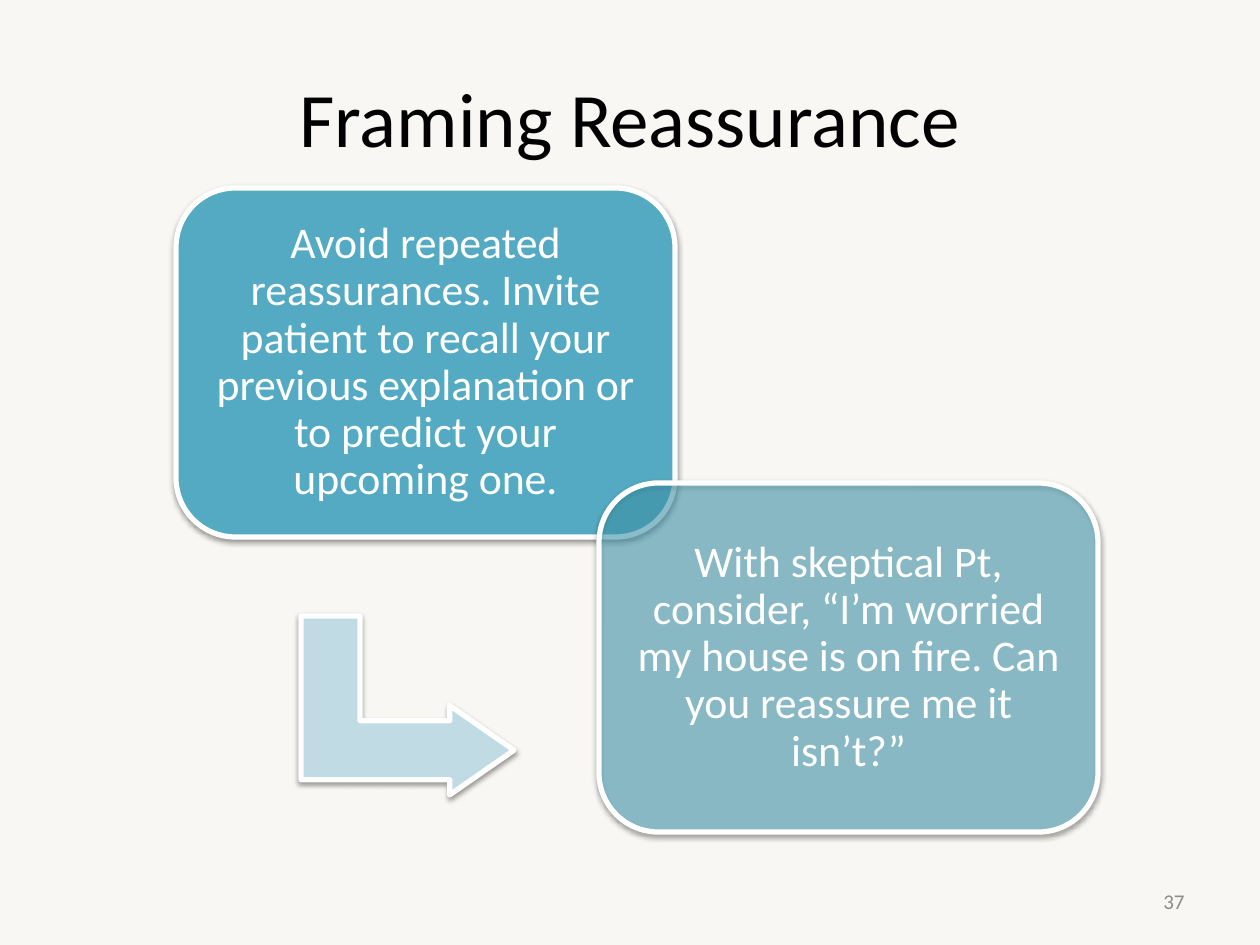
from lxml import etree
from pptx import Presentation
from pptx.dml.color import RGBColor
from pptx.enum.shapes import MSO_SHAPE
from pptx.enum.text import MSO_ANCHOR, PP_ALIGN
from pptx.oxml.ns import qn
from pptx.util import Emu, Pt

PX = 914400 / 126
FONT = "Calibri"
BLACK = RGBColor(0x00, 0x00, 0x00)
WHITE = RGBColor(0xFF, 0xFF, 0xFF)
GRAY = RGBColor(0x8C, 0x8C, 0x8C)
PAPER = RGBColor(0xF8, 0xF7, 0xF3)
TEAL = RGBColor(0x4B, 0xAC, 0xC6)
PALE_TEAL = RGBColor(0xC1, 0xDB, 0xE5)
ROUNDED, BENT_ARROW = MSO_SHAPE.ROUNDED_RECTANGLE, MSO_SHAPE.BENT_UP_ARROW
CENTER, RIGHT = PP_ALIGN.CENTER, PP_ALIGN.RIGHT
MIDDLE = MSO_ANCHOR.MIDDLE

deck = Presentation()
deck.slide_width, deck.slide_height = Emu(round(1260 * PX)), Emu(round(945 * PX))
page = deck.slides.add_slide(deck.slide_layouts[6])
page.background.fill.solid()
page.background.fill.fore_color.rgb = PAPER


def add_text(text, frame, size, color, align=CENTER, inset=None,
             line_spacing=None, space_after=None):
    box = page.shapes.add_textbox(*(Emu(round(n * PX)) for n in frame))
    body = box.text_frame
    body.word_wrap = True
    body.vertical_anchor = MIDDLE
    if inset is not None:
        body.margin_left = body.margin_right = Emu(round(inset * PX))
        body.margin_top = body.margin_bottom = Emu(round(inset * PX))
    para = body.paragraphs[0]
    para.alignment = align
    para.line_spacing = line_spacing
    para.space_after = space_after
    span = para.add_run()
    span.text = text
    span.font.name, span.font.size = FONT, Pt(size)
    span.font.color.rgb = color


def add_outlined(kind, frame, color, adjustments, opacity=100):
    """Add a white-edged shape with a soft shadow below it."""
    shape = page.shapes.add_shape(kind, *(Emu(round(n * PX)) for n in frame))
    for index, value in enumerate(adjustments):
        shape.adjustments[index] = value
    shape.fill.solid()
    shape.fill.fore_color.rgb = color
    shape.line.color.rgb = WHITE
    shape.line.width = Pt(3)
    shape.shadow.inherit = False
    properties = shape.element.spPr
    if opacity < 100:
        tint = properties.find(qn("a:solidFill")).find(qn("a:srgbClr"))
        etree.SubElement(tint, qn("a:alpha"), val=str(opacity * 1000))
    shadow = etree.SubElement(
        properties.find(qn("a:effectLst")), qn("a:outerShdw"),
        blurRad=str(Pt(3.1)), dist=str(Pt(1.6)), dir="5400000", rotWithShape="0")
    shade = etree.SubElement(shadow, qn("a:srgbClr"), val="000000")
    etree.SubElement(shade, qn("a:alpha"), val="38000")
    return shape


add_text("Framing Reassurance", (63, 38, 1134, 157), 44, BLACK)
add_text("37", (903, 876, 294, 50), 12, GRAY, align=RIGHT)

arrow = add_outlined(BENT_ARROW, (318, 599, 179, 213), PALE_TEAL, (0.33, 0.25, 0.36))
arrow.rotation = 90

CARD_WIDTH, CARD_HEIGHT, PADDING = 499, 349, 17
cards = [
    (176, 188, 90, "Avoid repeated reassurances. Invite patient to recall your "
                   "previous explanation or to predict your upcoming one."),
    (599, 483, 50, "With skeptical Pt, consider, “I’m worried my house is on fire. "
                   "Can you reassure me it isn’t?”"),
]
for left, top, opacity, text in cards:
    add_outlined(ROUNDED, (left, top, CARD_WIDTH, CARD_HEIGHT), TEAL, (0.17,), opacity)
    add_text(text, (left + PADDING, top + PADDING,
                    CARD_WIDTH - 2 * PADDING, CARD_HEIGHT - 2 * PADDING),
             25, WHITE, inset=13, line_spacing=0.9, space_after=Pt(8.75))

deck.save("out.pptx")
